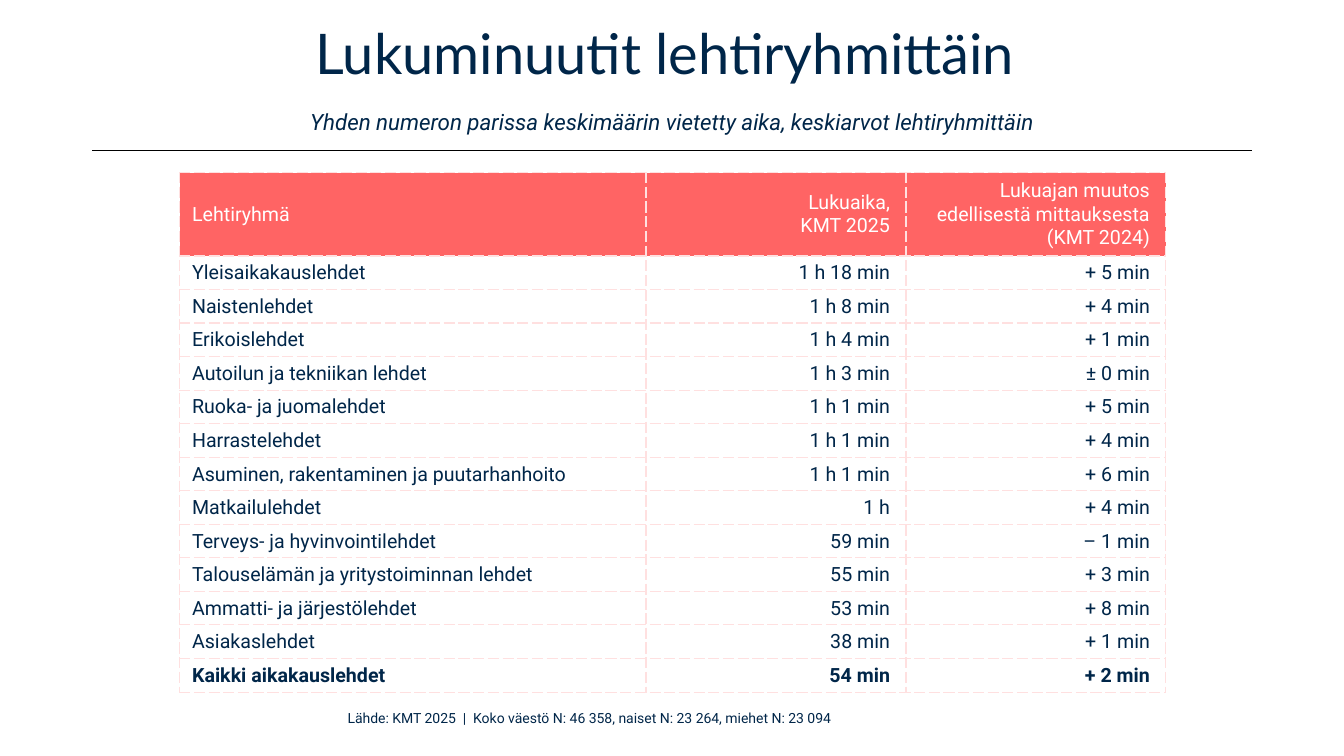
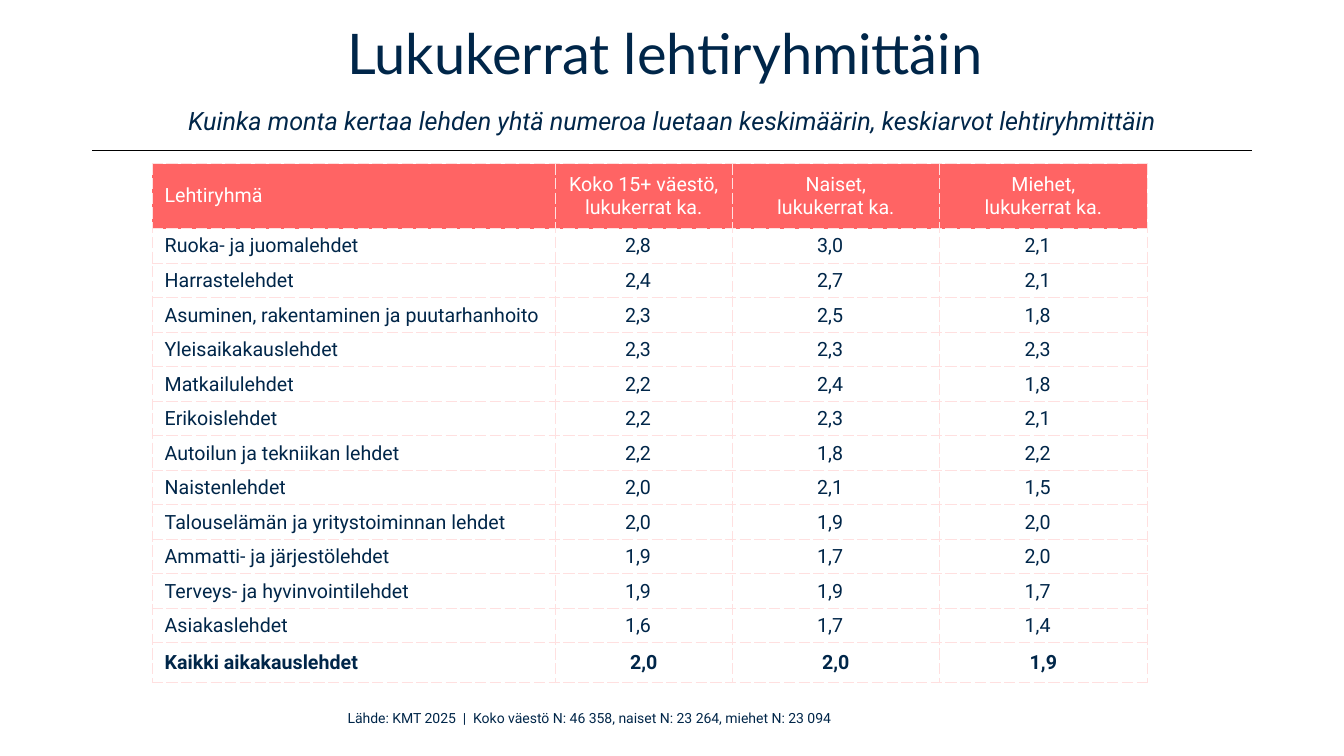
from dataclasses import dataclass

from lxml import etree
from pptx import Presentation
from pptx import util as u
from pptx.dml import color
from pptx.enum import shapes, text
from pptx.oxml import ns

Cm, Pt = u.Cm, u.Pt
ALIGN = text.PP_ALIGN


@dataclass(frozen=True)
class Theme:
    ink: str = "002649"
    rule: str = "000000"
    head: str = "FF6464"
    light: str = "FFFFFF"
    edge: str = "FFE0E0"
    title: str = "Lato"
    body: str = "Roboto"
    big: int = 40
    cell: int = 14
    note: int = 10


@dataclass(frozen=True)
class Grid:
    left: float
    top: float
    height: float
    head: float
    last: float
    cols: tuple[float, ...]
    align: ALIGN
    pad: float
    rows: tuple[tuple[str, ...], ...]

    def heights(self) -> list[float]:
        count = len(self.rows) - 2
        step = (self.height - self.head - self.last) / count
        return [self.head] + [step] * count + [self.last]


@dataclass(frozen=True)
class Page:
    title: str
    sub: str
    size: int
    grid: Grid


T = Theme()
SOURCE = "Lähde: KMT 2025  |  Koko väestö N: 46 358, naiset N: 23 264, miehet N: 23 094"
WIDE, THIN, SLIM = 0.31, 0.13, 0.02

PAGES = (
    Page(
        "Lukuminuutit lehtiryhmittäin ",
        "Yhden numeron parissa keskimäärin vietetty aika, keskiarvot lehtiryhmittäin",
        16,
        Grid(4.53, 4.35, 13.1, 2.1, 0.85, (11.75, 6.55, 6.55), ALIGN.RIGHT, 0.4, (
            ("Lehtiryhmä", "Lukuaika,\vKMT 2025",
             "Lukuajan muutos edellisestä mittauksesta\n(KMT 2024)"),
            ("Yleisaikakauslehdet", "1 h 18 min", "+ 5 min"),
            ("Naistenlehdet", "1 h 8 min", "+ 4 min"),
            ("Erikoislehdet", "1 h 4 min", "+ 1 min"),
            ("Autoilun ja tekniikan lehdet", "1 h 3 min", "± 0 min"),
            ("Ruoka- ja juomalehdet", "1 h 1 min", "+ 5 min"),
            ("Harrastelehdet", "1 h 1 min", "+ 4 min"),
            ("Asuminen, rakentaminen ja puutarhanhoito", "1 h 1 min", "+ 6 min"),
            ("Matkailulehdet", "1 h", "+ 4 min"),
            ("Terveys- ja hyvinvointilehdet", "59 min", "– 1 min"),
            ("Talouselämän ja yritystoiminnan lehdet", "55 min", "+ 3 min"),
            ("Ammatti- ja järjestölehdet", "53 min", "+ 8 min"),
            ("Asiakaslehdet", "38 min", "+ 1 min"),
            ("Kaikki aikakauslehdet", "54 min", "+ 2 min"),
        )),
    ),
    Page(
        "Lukukerrat lehtiryhmittäin ",
        "Kuinka monta kertaa lehden yhtä numeroa luetaan keskimäärin, "
        "keskiarvot lehtiryhmittäin",
        18,
        Grid(3.84, 4.13, 13.08, 1.63, 1, (10.16, 4.45, 5.23, 5.23), ALIGN.CENTER, WIDE, (
            ("Lehtiryhmä", "Koko 15+ väestö,\nlukukerrat ka.",
             "Naiset,\nlukukerrat ka.", "Miehet,\nlukukerrat ka."),
            ("Ruoka- ja juomalehdet", "2,8", "3,0", "2,1"),
            ("Harrastelehdet", "2,4", "2,7", "2,1"),
            ("Asuminen, rakentaminen ja puutarhanhoito", "2,3", "2,5", "1,8"),
            ("Yleisaikakauslehdet", "2,3", "2,3", "2,3"),
            ("Matkailulehdet", "2,2", "2,4", "1,8"),
            ("Erikoislehdet", "2,2", "2,3", "2,1"),
            ("Autoilun ja tekniikan lehdet", "2,2", "1,8", "2,2"),
            ("Naistenlehdet", "2,0", "2,1", "1,5"),
            ("Talouselämän ja yritystoiminnan lehdet", "2,0", "1,9", "2,0"),
            ("Ammatti- ja järjestölehdet", "1,9", "1,7", "2,0"),
            ("Terveys- ja hyvinvointilehdet", "1,9", "1,9", "1,7"),
            ("Asiakaslehdet", "1,6", "1,7", "1,4"),
            ("Kaikki aikakauslehdet", "2,0", "2,0", "1,9"),
        )),
    ),
)


def rgb(code: str) -> color.RGBColor:
    return color.RGBColor.from_string(code)


def style(font, name: str, size: int, ink: str) -> None:
    font.name = name
    font.size = Pt(size)
    font.color.rgb = rgb(ink)


def add_box(slide, left: float, top: float, width: float, height: float):
    frame = slide.shapes.add_textbox(Cm(left), Cm(top), Cm(width), Cm(height)).text_frame
    frame.word_wrap = True
    para = frame.paragraphs[0]
    para.alignment = ALIGN.CENTER
    return frame, para


def add_title(slide, page: Page) -> None:
    frame, para = add_box(slide, 2.34, 0.81, 29.2, 2.72)
    frame.vertical_anchor = text.MSO_ANCHOR.MIDDLE
    para.line_spacing = Pt(35)
    para.space_after = Pt(18)
    style(para.font, T.title, T.big, T.ink)
    para.add_run().text = page.title
    para.add_line_break()
    sub = para.add_run()
    sub.text = page.sub
    sub.font.name = T.body
    sub.font.size = Pt(page.size)
    sub.font.italic = True


def add_rule(slide) -> None:
    line = slide.shapes.add_connector(
        shapes.MSO_CONNECTOR.STRAIGHT, Cm(2.32), Cm(3.79), Cm(31.55), Cm(3.79))
    line.line.color.rgb = rgb(T.rule)
    line.line.width = Pt(1)
    etree.SubElement(line._element.spPr, ns.qn("a:effectLst"))


def add_note(slide) -> None:
    _, para = add_box(slide, 6.38, 17.75, 16.94, 0.68)
    style(para.font, T.body, T.note, T.ink)
    para.add_run().text = SOURCE


def add_edges(cell) -> None:
    props = cell._tc.get_or_add_tcPr()
    for side in ("lnL", "lnR", "lnT", "lnB"):
        line = etree.SubElement(props, ns.qn(f"a:{side}"), w=str(Pt(1)))
        fill = etree.SubElement(line, ns.qn("a:solidFill"))
        etree.SubElement(fill, ns.qn("a:srgbClr"), val=T.edge)
        etree.SubElement(line, ns.qn("a:prstDash"), val="sysDash")


def fill_cell(cell, words: str, grid: Grid, row: int, col: int) -> None:
    head, last = row == 0, row == len(grid.rows) - 1
    roomy = head or (last and col > 0)
    add_edges(cell)
    if head:
        cell.fill.solid()
        cell.fill.fore_color.rgb = rgb(T.head)
    else:
        cell.fill.background()
    cell.vertical_anchor = text.MSO_ANCHOR.MIDDLE
    cell.margin_left = Cm(WIDE if roomy or col == 0 else SLIM)
    cell.margin_right = Cm(grid.pad if col else WIDE if head else SLIM)
    cell.margin_top = Cm(THIN if roomy else SLIM)
    cell.margin_bottom = Cm(THIN if roomy else 0)
    cell.text_frame.text = words
    for para in cell.text_frame.paragraphs:
        para.alignment = grid.align if col else ALIGN.LEFT
        style(para.font, T.body, T.cell, T.light if head else T.ink)
        para.font.bold = last


def add_grid(slide, grid: Grid) -> None:
    table = slide.shapes.add_table(
        len(grid.rows), len(grid.cols), Cm(grid.left), Cm(grid.top),
        Cm(sum(grid.cols)), Cm(grid.height)).table
    table.first_row = table.horz_banding = False
    for col, width in zip(table.columns, grid.cols):
        col.width = Cm(width)
    for row, height in zip(table.rows, grid.heights()):
        row.height = Cm(height)
    for r, row in enumerate(grid.rows):
        for c, words in enumerate(row):
            fill_cell(table.cell(r, c), words, grid, r, c)


def main() -> None:
    deck = Presentation()
    deck.slide_width, deck.slide_height = Cm(33.87), Cm(19.05)
    for page in PAGES:
        slide = deck.slides.add_slide(deck.slide_layouts[6])
        add_rule(slide)
        add_note(slide)
        add_title(slide, page)
        add_grid(slide, page.grid)
    deck.save("out.pptx")


if __name__ == "__main__":
    main()
